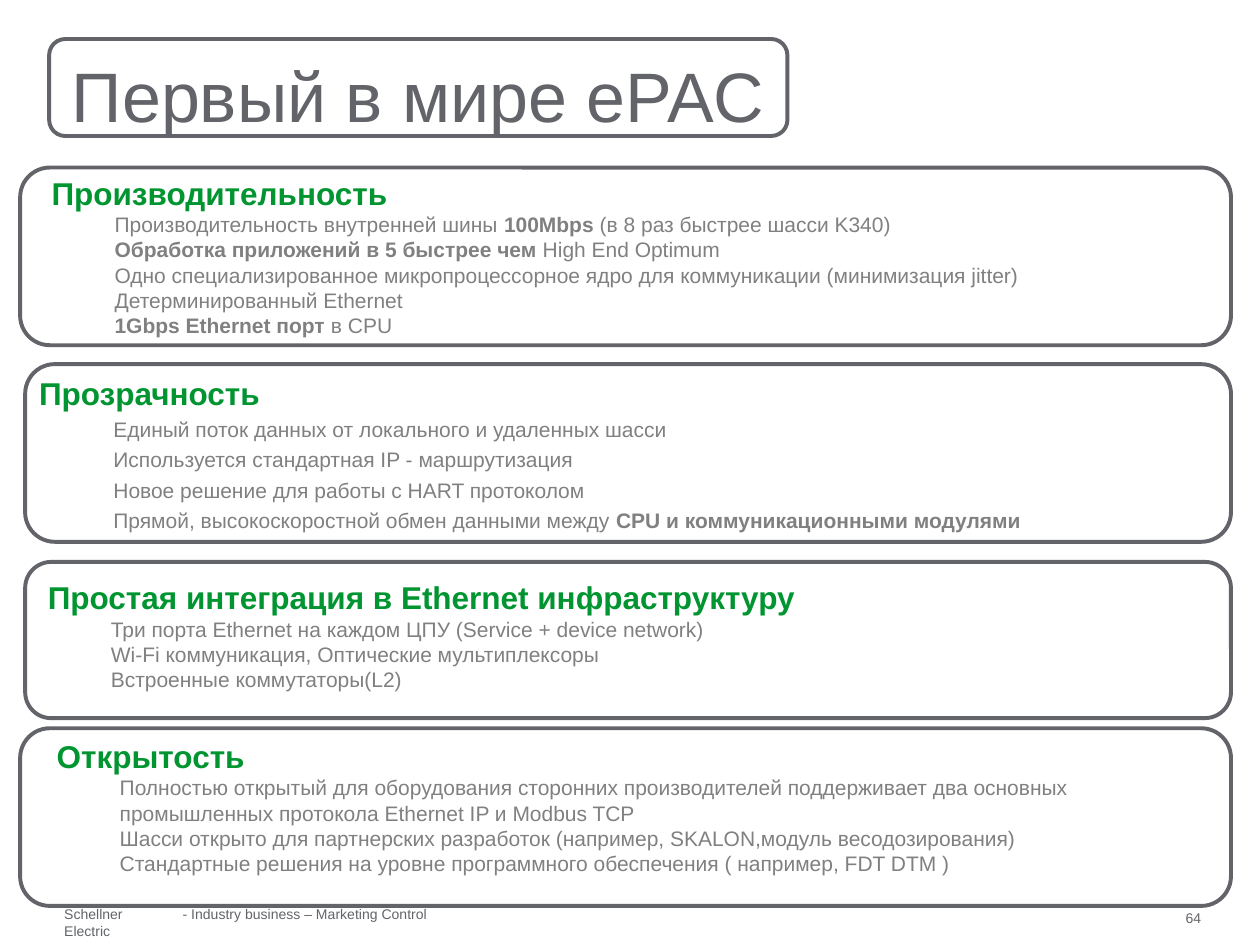
from dataclasses import dataclass

from pptx import Presentation
from pptx.dml.color import RGBColor
from pptx.enum.shapes import MSO_SHAPE
from pptx.enum.text import MSO_ANCHOR, MSO_AUTO_SIZE, PP_ALIGN
from pptx.util import Inches, Pt

ROUNDED = MSO_SHAPE.ROUNDED_RECTANGLE
TOP = MSO_ANCHOR.TOP
LEFT = PP_ALIGN.LEFT
NO_AUTOFIT = MSO_AUTO_SIZE.NONE
TITLE_ONLY = 5


@dataclass(frozen=True)
class Theme:
    font: str = "Arial"
    grey: RGBColor = RGBColor(0x62, 0x64, 0x69)
    green: RGBColor = RGBColor(0x00, 0x95, 0x30)
    detail: RGBColor = RGBColor(0x80, 0x80, 0x80)
    title_size: int = 40
    heading_size: int = 18
    detail_size: int = 12
    footer_size: int = 8
    frame_width: float = 2.25


@dataclass(frozen=True)
class Section:
    frame: tuple
    text: tuple
    heading: str
    details: list
    indent: float = 0.5
    gap: float = 0


THEME = Theme()

SECTIONS = [
    Section(
        (0.16, 1.33, 9.61, 1.41), (0.41, 1.38, 8.86, 1.31),
        "Производительность",
        [
            [("Производительность внутренней шины ", False), ("100Mbps", True),
             (" (в 8 раз быстрее шасси K340)", False)],
            [("Обработка приложений в 5 быстрее чем ", True),
             ("High End Optimum", False)],
            [("Одно специализированное микропроцессорное ядро для "
              "коммуникации (минимизация jitter)", False)],
            [("Детерминированный Ethernet", False)],
            [("1Gbps Ethernet порт ", True), ("в CPU", False)],
        ],
    ),
    Section(
        (0.2, 2.89, 9.57, 1.41), (0.31, 2.97, 9.51, 1.4),
        "Прозрачность",
        [
            [("Единый поток данных от локального и удаленных шасси", False)],
            [("Используется стандартная IP - маршрутизация", False)],
            [("Новое решение для работы с HART протоколом", False)],
            [("Прямой, высокоскоростной обмен данными между ", False),
             ("CPU и коммуникационными модулями", True)],
        ],
        indent=0.59, gap=2.8,
    ),
    Section(
        (0.2, 4.46, 9.57, 1.24), (0.38, 4.59, 9.14, 0.91),
        "Простая интеграция в Ethernet инфраструктуру",
        [
            [("Три порта Ethernet на каждом ЦПУ (Service + device network)", False)],
            [("Wi-Fi коммуникация, Оптические мультиплексоры", False)],
            [("Встроенные коммутаторы(L2)", False)],
        ],
    ),
    Section(
        (0.16, 5.78, 9.61, 1.41), (0.45, 5.85, 9.21, 1.3),
        "Открытость",
        [
            [("Полностью открытый для оборудования сторонних производителей "
              "поддерживает два основных промышленных протокола Ethernet IP "
              "и Modbus TCP", False)],
            [("Шасси открыто для партнерских разработок (например, "
              "SKALON,модуль весодозирования)", False)],
            [("Стандартные решения на уровне программного обеспечения "
              "( например, FDT DTM )", False)],
        ],
    ),
]

FOOTERS = [
    ((0.51, 7.19, 0.8, 0.26), "Schellner Electric"),
    ((1.45, 7.19, 2.2, 0.13), "- Industry business – Marketing Control"),
    ((9.41, 7.22, 0.32, 0.13), "64"),
]


def box_of(lengths):
    return [Inches(length) for length in lengths]


def add_run(paragraph, text, size, color, bold=False):
    run = paragraph.add_run()
    run.text = text
    run.font.name = THEME.font
    run.font.size = Pt(size)
    run.font.bold = bold
    run.font.color.rgb = color


def prepare_frame(frame):
    frame.word_wrap = True
    frame.auto_size = NO_AUTOFIT
    frame.vertical_anchor = TOP
    frame.margin_left = frame.margin_right = 0
    frame.margin_top = frame.margin_bottom = 0
    frame.paragraphs[0].alignment = LEFT
    return frame


def add_text_frame(slide, lengths):
    return prepare_frame(slide.shapes.add_textbox(*box_of(lengths)).text_frame)


def add_outline(slide, lengths):
    outline = slide.shapes.add_shape(ROUNDED, *box_of(lengths))
    outline.shadow.inherit = False
    outline.fill.background()
    outline.line.color.rgb = THEME.grey
    outline.line.width = Pt(THEME.frame_width)


def set_title(slide, lengths, text):
    title = slide.shapes.title
    title.left, title.top, title.width, title.height = box_of(lengths)
    frame = prepare_frame(title.text_frame)
    add_run(frame.paragraphs[0], text, THEME.title_size, THEME.grey)


def add_section(slide, section):
    add_outline(slide, section.frame)
    frame = add_text_frame(slide, section.text)
    add_run(frame.paragraphs[0], section.heading, THEME.heading_size,
            THEME.green, True)
    for detail in section.details:
        paragraph = frame.add_paragraph()
        paragraph.level = 1
        paragraph.space_before = Pt(section.gap)
        properties = paragraph._p.get_or_add_pPr()
        properties.set("marL", str(Inches(section.indent)))
        properties.set("indent", "0")
        for text, bold in detail:
            add_run(paragraph, text, THEME.detail_size, THEME.detail, bold)


def add_footer(slide, lengths, text):
    frame = add_text_frame(slide, lengths)
    add_run(frame.paragraphs[0], text, THEME.footer_size, THEME.grey)


def main():
    deck = Presentation()
    deck.slide_width, deck.slide_height = Inches(10), Inches(7.5)
    slide = deck.slides.add_slide(deck.slide_layouts[TITLE_ONLY])
    set_title(slide, (0.57, 0.42, 5.7, 0.66), "Первый в мире ePAC")
    add_outline(slide, (0.39, 0.31, 5.86, 0.77))
    for section in SECTIONS:
        add_section(slide, section)
    for lengths, text in FOOTERS:
        add_footer(slide, lengths, text)
    deck.save("out.pptx")


if __name__ == "__main__":
    main()
